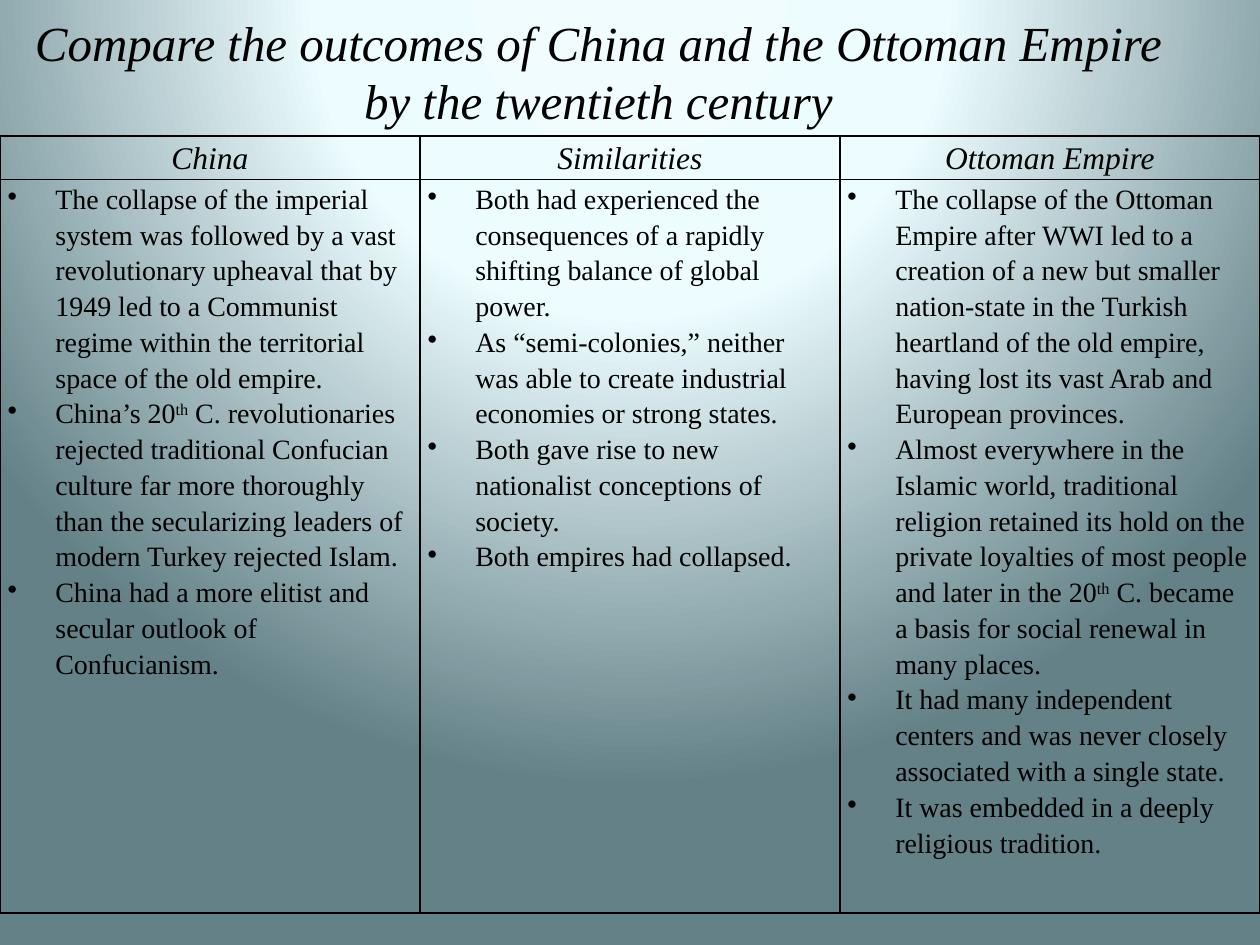
import pptx
import pptx.dml.color
import pptx.enum.text
import pptx.oxml
import pptx.oxml.ns
import pptx.util

FONT = "Times New Roman"
INK = "000000"
BACKDROP = [(0, "F1FCFF"), (40, "ECFCFF"), (100, "638187")]
TITLE = "Compare the outcomes of China and the Ottoman Empire by the twentieth century"
COLUMNS = {
    "China": [
        "The collapse of the imperial system was followed by a vast revolutionary upheaval "
        "that by 1949 led to a Communist regime within the territorial space of the old empire.",
        "China’s 20^th^ C. revolutionaries rejected traditional Confucian culture far more "
        "thoroughly than the secularizing leaders of modern Turkey rejected Islam.",
        "China had a more elitist and secular outlook of Confucianism.",
    ],
    "Similarities": [
        "Both had experienced the consequences of a rapidly shifting balance of global power.",
        "As “semi-colonies,” neither was able to create industrial economies or strong states.",
        "Both gave rise to new nationalist conceptions of society.",
        "Both empires had collapsed.",
    ],
    "Ottoman Empire": [
        "The collapse of the Ottoman Empire after WWI led to a creation of a new but smaller "
        "nation-state in the Turkish heartland of the old empire, having lost its vast Arab "
        "and European provinces.",
        "Almost everywhere in the Islamic world, traditional religion retained its hold on the "
        "private loyalties of most people and later in the 20^th^ C. became a basis for social "
        "renewal in many places.",
        "It had many independent centers and was never closely associated with a single state.",
        "It was embedded in a deeply religious tradition.",
    ],
}


def color(value):
    """Return the colour for a hex string."""
    return pptx.dml.color.RGBColor.from_string(value)


def element(markup):
    """Parse a drawing element whose root tag takes the a: namespace."""
    head, gap, rest = markup.partition(" ")
    return pptx.oxml.parse_xml(f"{head} {pptx.oxml.ns.nsdecls('a')} {rest}")


class Composer:
    """Holds the style and the current slide."""

    def __init__(self, deck, font, ink):
        """Start a blank slide in the deck."""
        self.deck, self.font, self.ink = deck, font, ink
        self.page = deck.slides.add_slide(deck.slide_layouts[6])

    def frame(self, left, top, width, height):
        """Turn shares of the slide's size into lengths."""
        wide, high = self.deck.slide_width, self.deck.slide_height
        return int(left * wide), int(top * high), int(width * wide), int(height * high)

    def backdrop(self, stops):
        """Fill the background with a circular gradient centred on the top half."""
        fill = self.page.background.fill
        fill.gradient()
        marks = "".join(f'<a:gs pos="{share * 1000}"><a:srgbClr val="{value}"/></a:gs>'
                        for share, value in stops)
        old = self.page.element.xpath(".//a:gradFill")[0]
        old.getparent().replace(old, element(
            f'<a:gradFill rotWithShape="1"><a:gsLst>{marks}</a:gsLst><a:path path="circle">'
            '<a:fillToRect l="50000" t="-80000" r="50000" b="180000"/></a:path></a:gradFill>'))

    def add_spans(self, para, text, size, italic=False, centered=False):
        """Add runs to a paragraph, raising what stands between carets."""
        align = pptx.enum.text.PP_ALIGN
        para.alignment = align.CENTER if centered else align.LEFT
        for index, words in enumerate(text.split("^")):
            span = para.add_run()
            span.text = words
            span.font.name, span.font.size = self.font, pptx.util.Pt(size)
            span.font.italic, span.font.bold = italic, False
            span.font.color.rgb = color(self.ink)
            if index % 2:
                span.font._element.set("baseline", "30000")

    def title(self, text, place):
        """Add the centred italic heading."""
        box = self.page.shapes.add_textbox(*self.frame(*place))
        box.text_frame.word_wrap = True
        box.text_frame.vertical_anchor = pptx.enum.text.MSO_ANCHOR.MIDDLE
        self.add_spans(box.text_frame.paragraphs[0], text, 28, italic=True, centered=True)

    def bullet(self, para):
        """Give a paragraph a bullet with a hanging indent."""
        props = para._p.get_or_add_pPr()
        indent = pptx.util.Inches(0.38)
        props.set("marL", str(indent))
        props.set("indent", str(-indent))
        props.append(element('<a:buChar char="•"/>'))

    def cell(self, cell, texts, size, heading):
        """Fill one bordered, transparent cell."""
        cell.margin_left = cell.margin_right = pptx.util.Inches(0.06)
        cell.margin_top = cell.margin_bottom = 0
        cell.fill.background()
        for index, side in enumerate("LRTB"):
            cell._tc.get_or_add_tcPr().insert(index, element(
                f'<a:ln{side} w="12700"><a:solidFill><a:srgbClr val="{self.ink}"/>'
                f"</a:solidFill></a:ln{side}>"))
        for index, text in enumerate(texts):
            para = cell.text_frame.add_paragraph() if index else cell.text_frame.paragraphs[0]
            para.line_spacing = 1.15
            self.add_spans(para, text, size, italic=heading, centered=heading)
            if not heading:
                self.bullet(para)

    def table(self, columns, place, row_shares):
        """Add a table with a heading and a bulleted list in each column."""
        grid = self.page.shapes.add_table(2, len(columns), *self.frame(*place)).table
        grid.first_row = grid.horz_banding = False
        for row, share in zip(grid.rows, row_shares):
            row.height = int(share * self.deck.slide_height)
        for index, (heading, points) in enumerate(columns.items()):
            self.cell(grid.cell(0, index), [heading], 18, True)
            self.cell(grid.cell(1, index), points, 16, False)


def main():
    """Build and save the comparison slide."""
    deck = pptx.Presentation()
    deck.slide_width, deck.slide_height = pptx.util.Inches(10), pptx.util.Inches(7.5)
    composer = Composer(deck, FONT, INK)
    composer.backdrop(BACKDROP)
    composer.title(TITLE, (0, 0.04, 0.95, 0.07))
    rows = (0.27 / 7.5, 5.64 / 7.5)
    composer.table(COLUMNS, (0, 1.08 / 7.5, 1, sum(rows)), rows)
    deck.save("out.pptx")


if __name__ == "__main__":
    main()
